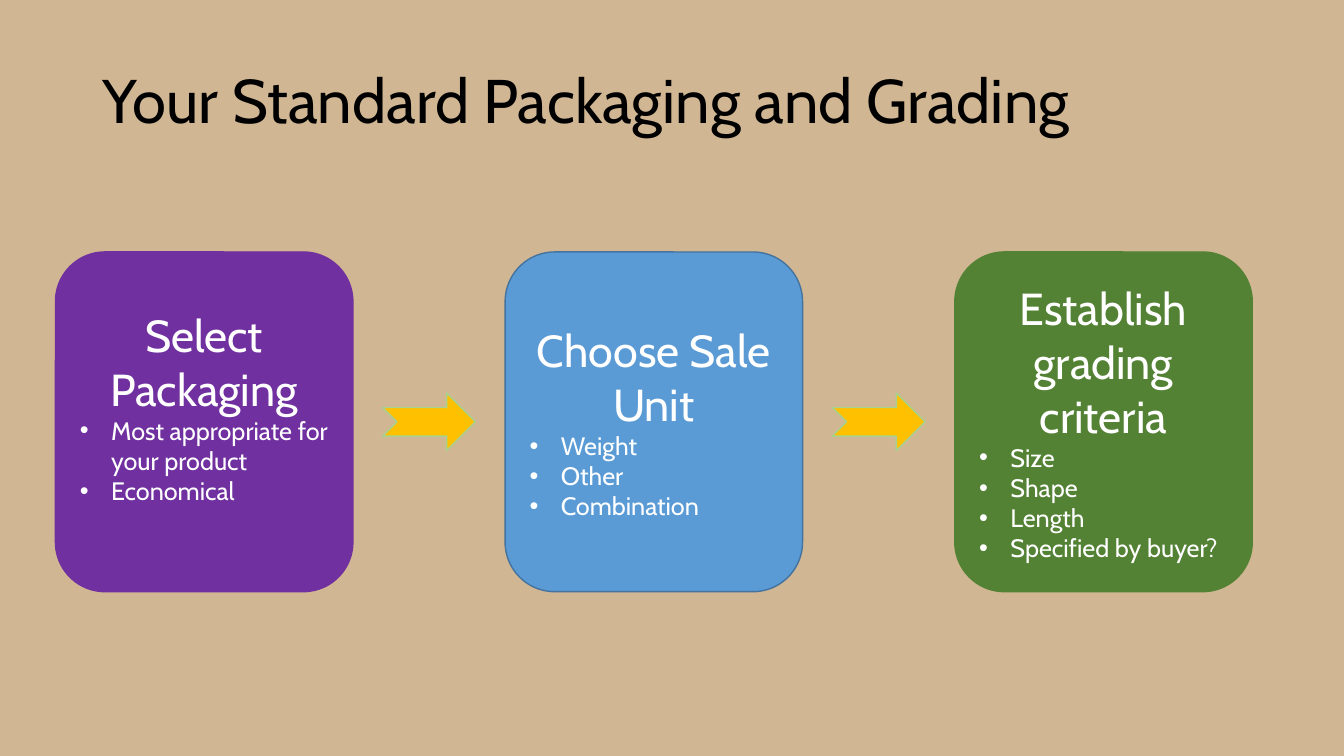
from lxml import etree
from pptx import Presentation
from pptx.dml.color import RGBColor
from pptx.enum.shapes import MSO_SHAPE
from pptx.enum.text import MSO_ANCHOR, MSO_AUTO_SIZE, PP_ALIGN
from pptx.oxml.ns import qn
from pptx.util import Inches, Pt

ROUNDED = MSO_SHAPE.ROUNDED_RECTANGLE
ARROW = MSO_SHAPE.NOTCHED_RIGHT_ARROW
MIDDLE = MSO_ANCHOR.MIDDLE
FIXED_SIZE = MSO_AUTO_SIZE.NONE
LEFT, CENTER = PP_ALIGN.LEFT, PP_ALIGN.CENTER

CARD_LEFT, CARD_TOP, CARD_WIDTH, CARD_HEIGHT = 0.55, 2.5, 2.95, 3.37
CARD_PITCH = 4.46
ARROW_WIDTH, ARROW_HEIGHT = 0.92, 0.57

STEPS = [
    ("Select Packaging", ["Most appropriate for your product", "Economical"],
     "7030A0", "7030A0", 0.35),
    ("Choose Sale Unit", ["Weight", "Other", "Combination"],
     "5B9BD5", "43739E", 0.05),
    ("Establish grading criteria", ["Size", "Shape", "Length", "Specified by buyer?"],
     "548235", "548235", 0.05),
]


def color(value):
    return RGBColor.from_string(value)


class ProcessSlide:
    font_name = "Cabin"
    heading_size = 32
    bullet_size = 18
    indent = 0.31

    def __init__(self, deck, background):
        self.page = deck.slides.add_slide(deck.slide_layouts[5])
        self.page.background.fill.solid()
        self.page.background.fill.fore_color.rgb = color(background)

    def add_run(self, para, text, size, text_color):
        span = para.add_run()
        span.text = text
        span.font.name = self.font_name
        span.font.size = Pt(size)
        span.font.color.rgb = color(text_color)

    def add_title(self, text, left, top, width, height):
        title = self.page.shapes.title
        title.left, title.top = Inches(left), Inches(top)
        title.width, title.height = Inches(width), Inches(height)
        frame = title.text_frame
        frame.word_wrap = True
        frame.auto_size = FIXED_SIZE
        frame.vertical_anchor = MIDDLE
        para = frame.paragraphs[0]
        para.alignment = LEFT
        para.line_spacing = 0.9
        self.add_run(para, text, 44, "000000")

    def add_block(self, kind, left, top, width, height, fill, line):
        block = self.page.shapes.add_shape(
            kind, Inches(left), Inches(top), Inches(width), Inches(height))
        block.shadow.inherit = False
        block.fill.solid()
        block.fill.fore_color.rgb = color(fill)
        block.line.color.rgb = color(line)
        block.line.width = Pt(1)
        return block

    def add_bullet(self, frame, text):
        para = frame.add_paragraph()
        para.alignment = LEFT
        properties = para._p.get_or_add_pPr()
        properties.set("marL", str(Inches(self.indent)))
        properties.set("indent", str(-Inches(self.indent)))
        etree.SubElement(properties, qn("a:buFont"), typeface="Arial")
        etree.SubElement(properties, qn("a:buChar"), char="•")
        self.add_run(para, text, self.bullet_size, "FFFFFF")

    def add_card(self, left, heading, bullets, fill, line, bottom_inset):
        card = self.add_block(
            ROUNDED, left, CARD_TOP, CARD_WIDTH, CARD_HEIGHT, fill, line)
        frame = card.text_frame
        frame.word_wrap = True
        frame.vertical_anchor = MIDDLE
        frame.margin_bottom = Inches(bottom_inset)
        para = frame.paragraphs[0]
        para.alignment = CENTER
        self.add_run(para, heading, self.heading_size, "FFFFFF")
        for bullet in bullets:
            self.add_bullet(frame, bullet)

    def add_arrow(self, card_left):
        gap = CARD_PITCH - CARD_WIDTH
        left = card_left + CARD_WIDTH + (gap - ARROW_WIDTH) / 2
        top = CARD_TOP + (CARD_HEIGHT - ARROW_HEIGHT) / 2
        self.add_block(ARROW, left, top, ARROW_WIDTH, ARROW_HEIGHT, "FFC000", "A9D18E")


def main():
    deck = Presentation()
    deck.slide_width, deck.slide_height = Inches(13.33), Inches(7.5)
    slide = ProcessSlide(deck, "D0B693")
    slide.add_title("Your Standard Packaging and Grading", 0.92, 0.3, 11.5, 1.45)
    lefts = [CARD_LEFT + index * CARD_PITCH for index in range(len(STEPS))]
    for left, step in zip(lefts, STEPS):
        slide.add_card(left, *step)
    for left in lefts[:-1]:
        slide.add_arrow(left)
    deck.save("out.pptx")


if __name__ == "__main__":
    main()
